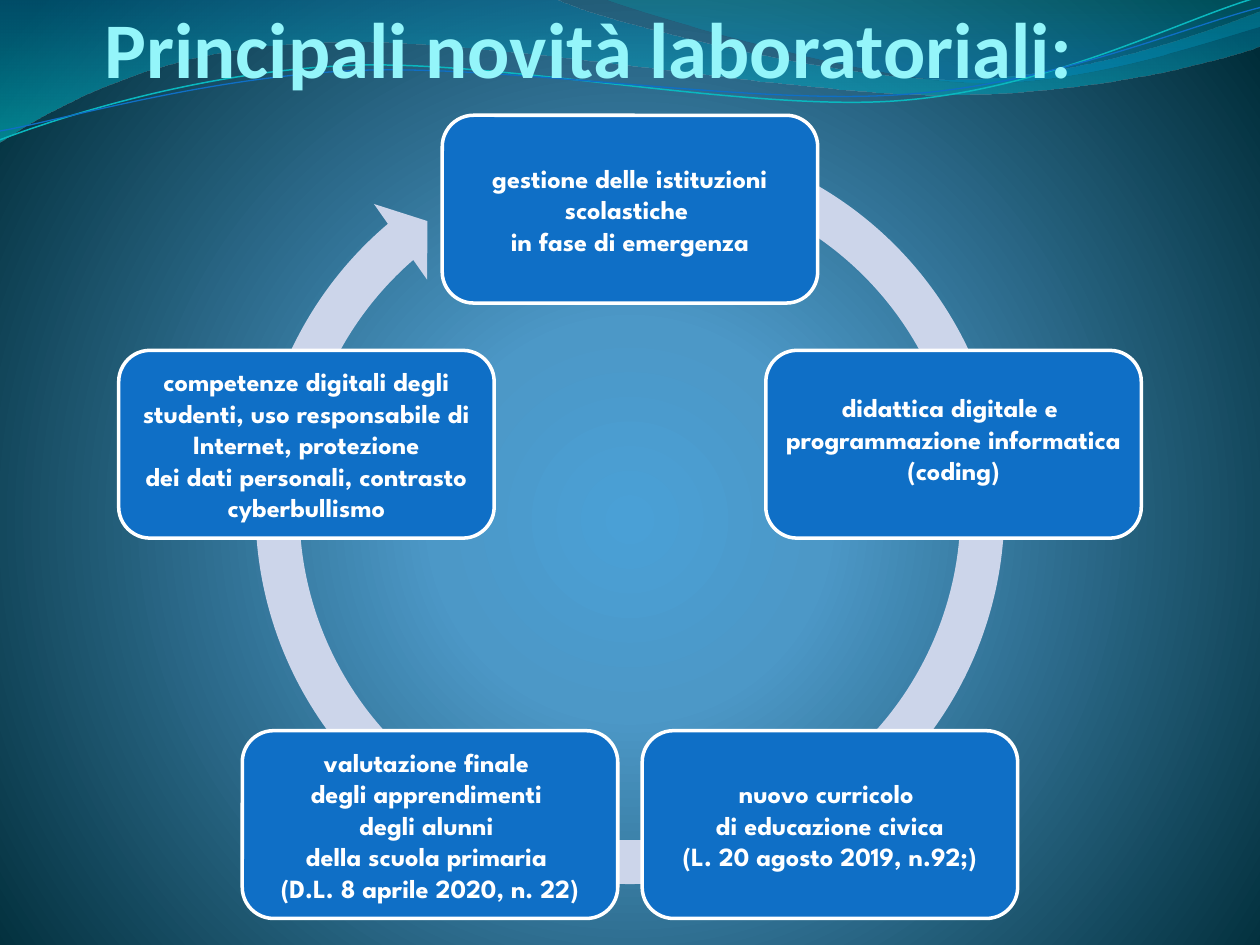
import math
from dataclasses import dataclass

from lxml import etree
from pptx import Presentation
from pptx.dml.color import RGBColor
from pptx.enum import shapes, text
from pptx.oxml import ns
from pptx.util import Inches, Pt

WHITE = RGBColor(0xFF, 0xFF, 0xFF)
BLUE = RGBColor(0x0F, 0x6F, 0xC6)
TEAL = RGBColor(0x0A, 0xB8, 0xBF)
PALE = RGBColor(0xCC, 0xD5, 0xEA)
AQUA = RGBColor(0x94, 0xF5, 0xFA)
SKY = RGBColor(0x4A, 0xA0, 0xD6)
STEEL = RGBColor(0x4C, 0x98, 0xC7)
NIGHT = RGBColor(0x00, 0x2C, 0x38)
OCEAN = RGBColor(0x00, 0x74, 0xA1)
TURQUOISE = RGBColor(0x00, 0xC6, 0xCF)
LAGOON = RGBColor(0x00, 0xA1, 0xA9)
AZURE = RGBColor(0x00, 0x8B, 0xBF)

CENTER_X, CENTER_Y, RADIUS = 5, 4.36, 2.7
BOX_WIDTH, BOX_HEIGHT = 2.98, 1.49
ARROW_SIZE, ARROW_TOP = 6.33, 0.88
MARGIN = 0.06


@dataclass
class Stop:
    position: int
    color: RGBColor
    opacity: int = 100


@dataclass
class Wave:
    points: list
    stops: tuple = ()
    color: RGBColor = None
    weight: float = 0


@dataclass
class Topic:
    lines: list
    bottom: float = MARGIN


WAVES = [
    Wave([(0, 0), (4.4, -0.01),
          [(4.76, 0.17), (6.64, 0.63), (7.58, 0.63)],
          [(8.53, 0.63), (9.58, 0.26), (10, 0.09)], (10.01, 0.36),
          [(9.83, 0.44), (8.7, 0.76), (7.46, 0.75)],
          [(6.22, 0.75), (3.82, 0.28), (2.57, 0.34)],
          [(1.29, 0.36), (0.46, 0.83), (-0.01, 1.13)], (0, 0)],
         stops=(Stop(0, OCEAN, 45), Stop(100, TURQUOISE, 55))),
    Wave([(4.79, -0.01),
          [(5.09, 0.11), (6.82, 0.62), (7.69, 0.65)],
          [(8.56, 0.69), (9.61, 0.32), (10, 0.21)], (10, 0), (4.79, -0.01)],
         stops=(Stop(0, LAGOON, 30), Stop(80, AZURE, 45))),
    Wave([(0, 1.11),
          [(0.48, 0.93), (1.58, 0.57), (2.77, 0.52)],
          [(3.95, 0.47), (5.93, 0.89), (7.13, 0.8)],
          [(8.33, 0.71), (9.38, 0.15), (9.98, -0.02)]], color=TEAL, weight=0.85),
    Wave([(0, 1.04),
          [(0.47, 0.96), (1.64, 0.61), (2.83, 0.56)],
          [(4.03, 0.51), (5.97, 0.84), (7.17, 0.75)],
          [(8.36, 0.67), (9.41, 0.21), (10, 0.06)]], color=BLUE, weight=0.75),
]

TOPICS = [
    Topic(["gestione delle istituzioni scolastiche ", "in fase di emergenza"]),
    Topic(["didattica digitale e ", "programmazione informatica (coding)"], bottom=0.15),
    Topic(["nuovo curricolo ", "di educazione civica", "(L. 20 agosto 2019, n.92;)"]),
    Topic(["valutazione finale ", "degli apprendimenti ", "degli alunni ",
           "della scuola primaria ", "(D.L. 8 aprile 2020, n. 22)"]),
    Topic(["competenze digitali degli studenti, uso responsabile di Internet, protezione",
           "dei dati personali, contrasto cyberbullismo"]),
]


def add_child(parent, tag: str, **attributes):
    return etree.SubElement(parent, ns.qn(tag), {k: str(v) for k, v in attributes.items()})


def set_gradient(fill, owner, stops, radial: bool = False) -> None:
    fill.gradient()
    gradient = next(owner.iter(ns.qn("a:gradFill")))
    for child in list(gradient):
        gradient.remove(child)
    stop_list = add_child(gradient, "a:gsLst")
    for stop in stops:
        entry = add_child(stop_list, "a:gs", pos=stop.position * 1000)
        color = add_child(entry, "a:srgbClr", val=stop.color)
        if stop.opacity < 100:
            add_child(color, "a:alpha", val=stop.opacity * 1000)
    if radial:
        circle = add_child(gradient, "a:path", path="circle")
        add_child(circle, "a:fillToRect", l=10000, t=110000, r=10000, b=100000)
    else:
        add_child(gradient, "a:lin", ang=5400000, scaled=1)


def bend_segments(shape, points: list) -> None:
    segments = list(shape._element.iter(ns.qn("a:lnTo")))
    for segment, item in zip(segments, points[1:]):
        if isinstance(item, list):
            curve = etree.Element(ns.qn("a:cubicBezTo"))
            for x, y in item:
                add_child(curve, "a:pt", x=Inches(x) - shape.left, y=Inches(y) - shape.top)
            segment.getparent().replace(segment, curve)


def draw_wave(page, wave: Wave) -> None:
    ends = [item[-1] if isinstance(item, list) else item for item in wave.points]
    start, *others = [(Inches(x), Inches(y)) for x, y in ends]
    builder = page.shapes.build_freeform(*start)
    builder.add_line_segments(others, close=bool(wave.stops))
    shape = builder.convert_to_shape()
    bend_segments(shape, wave.points)
    shape.shadow.inherit = False
    if wave.stops:
        set_gradient(shape.fill, shape._element, wave.stops)
        shape.line.fill.background()
    else:
        shape.fill.background()
        shape.line.color.rgb = wave.color
        shape.line.width = Pt(wave.weight)


def write(shape, lines: list, *, font: str, size: float, color: RGBColor,
          align, anchor, margin: float = 0, bottom: float = 0) -> None:
    frame = shape.text_frame
    frame.word_wrap = True
    frame.vertical_anchor = anchor
    frame.margin_left = frame.margin_right = frame.margin_top = Inches(margin)
    frame.margin_bottom = Inches(bottom)
    for index, line in enumerate(lines):
        para = frame.add_paragraph() if index else frame.paragraphs[0]
        para.alignment = align
        span = para.add_run()
        span.text = line
        span.font.name = font
        span.font.size = Pt(size)
        span.font.bold = True
        span.font.color.rgb = color


def draw_arrow(page) -> None:
    arrow = page.shapes.add_shape(
        shapes.MSO_SHAPE.CIRCULAR_ARROW, Inches(CENTER_X - ARROW_SIZE / 2),
        Inches(ARROW_TOP), Inches(ARROW_SIZE), Inches(ARROW_SIZE))
    for index, value in enumerate((0.055, 3.307, 137.649, 173.927, 0.058)):
        arrow.adjustments[index] = value
    arrow.shadow.inherit = False
    arrow.fill.solid()
    arrow.fill.fore_color.rgb = PALE
    arrow.line.fill.background()


def draw_topic(page, topic: Topic, angle: float) -> None:
    left = CENTER_X + RADIUS * math.sin(angle) - BOX_WIDTH / 2
    top = CENTER_Y - RADIUS * math.cos(angle) - BOX_HEIGHT / 2
    box = page.shapes.add_shape(shapes.MSO_SHAPE.ROUNDED_RECTANGLE, Inches(left),
                                Inches(top), Inches(BOX_WIDTH), Inches(BOX_HEIGHT))
    box.shadow.inherit = False
    box.fill.solid()
    box.fill.fore_color.rgb = BLUE
    box.line.color.rgb = WHITE
    box.line.width = Pt(2)
    write(box, topic.lines, font="League Spartan", size=15, color=WHITE,
          align=text.PP_ALIGN.CENTER, anchor=text.MSO_ANCHOR.MIDDLE,
          margin=MARGIN, bottom=topic.bottom)


def main() -> None:
    deck = Presentation()
    deck.slide_width, deck.slide_height = Inches(10), Inches(7.5)
    page = deck.slides.add_slide(deck.slide_layouts[6])
    set_gradient(page.background.fill, page._element,
                 (Stop(0, SKY), Stop(25, STEEL), Stop(100, NIGHT)), radial=True)
    for wave in WAVES:
        draw_wave(page, wave)
    draw_arrow(page)
    for index, topic in enumerate(TOPICS):
        draw_topic(page, topic, math.tau * index / len(TOPICS))
    title = page.shapes.add_textbox(Inches(0.83), Inches(0.44), Inches(8.5), Inches(0.31))
    write(title, ["Principali novità laboratoriali:"], font="Calibri", size=45, color=AQUA,
          align=text.PP_ALIGN.LEFT, anchor=text.MSO_ANCHOR.BOTTOM)
    deck.save("out.pptx")


if __name__ == "__main__":
    main()
